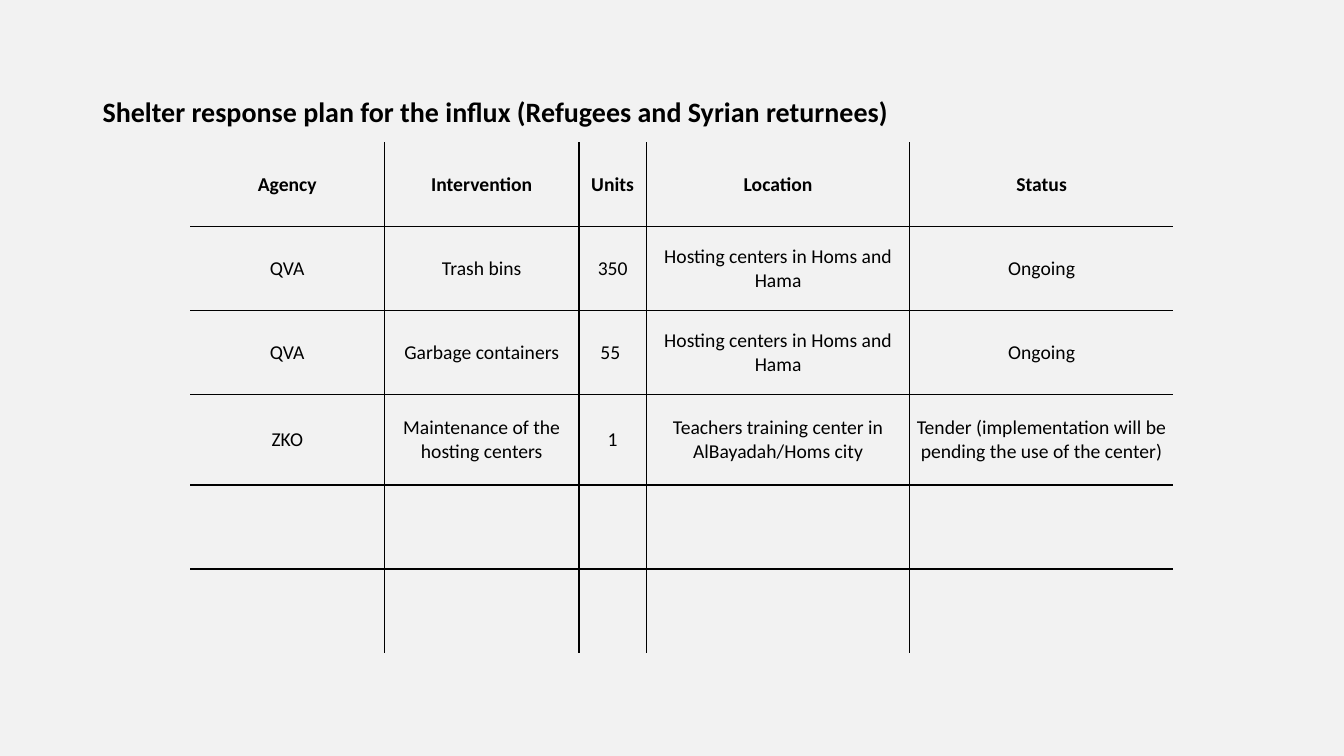
from lxml import etree
from pptx import Presentation
from pptx import util as u
from pptx.dml.color import RGBColor
from pptx.enum import text
from pptx.oxml import ns

TITLE = "Shelter response plan for the influx (Refugees and Syrian returnees)"
ROWS = [
    ("Agency", "Intervention", "Units", "Location", "Status"),
    ("QVA", "Trash bins", "350", "Hosting centers in Homs and Hama", "Ongoing"),
    ("QVA", "Garbage containers", "55 ", "Hosting centers in Homs and Hama", "Ongoing"),
    ("ZKO", "Maintenance of the hosting centers", "1",
     "Teachers training center in AlBayadah/Homs city",
     "Tender (implementation will be pending the use of the center)"),
    ("",) * 5,
    ("",) * 5,
]
COLUMN_WIDTHS = (4.9, 4.9, 1.7, 6.64, 6.64)
ROW_HEIGHTS = (2.12, 2.12, 2.12, 2.28, 2.12, 2.12)
TABLE_LEFT, TABLE_TOP = 4.79, 3.58
INK, PAPER, FONT = "000000", "F2F2F2", "Calibri"


def paint(fill, color):
    fill.solid()
    fill.fore_color.rgb = RGBColor.from_string(color)


def write(para, words, size, bold):
    span = para.add_run()
    span.text = words
    span.font.name = FONT
    span.font.size = u.Pt(size)
    span.font.bold = bold
    paint(span.font.fill, INK)


def add_border(cell, side):
    line = etree.SubElement(cell._tc.get_or_add_tcPr(), ns.qn(f"a:ln{side}"), w=str(u.Pt(1)))
    fill = etree.SubElement(line, ns.qn("a:solidFill"))
    etree.SubElement(fill, ns.qn("a:srgbClr"), val=INK)


def hide_border(cell, side):
    line = etree.SubElement(cell._tc.get_or_add_tcPr(), ns.qn(f"a:ln{side}"), w="0")
    etree.SubElement(line, ns.qn("a:noFill"))


def format_cell(cell, row, column):
    inner = {
        "L": column > 0,
        "R": column < len(COLUMN_WIDTHS) - 1,
        "T": row > 0,
        "B": row < len(ROWS) - 1,
    }
    for side, visible in inner.items():
        (add_border if visible else hide_border)(cell, side)
    paint(cell.fill, PAPER)
    cell.vertical_anchor = text.MSO_ANCHOR.MIDDLE
    cell.margin_left = cell.margin_right = cell.margin_top = u.Cm(0.02)
    cell.margin_bottom = 0


def add_title(page):
    box = page.shapes.title
    box.left, box.top, box.width, box.height = map(u.Cm, (2.33, 1.01, 29.21, 3.68))
    frame = box.text_frame
    frame.word_wrap = True
    frame.auto_size = text.MSO_AUTO_SIZE.NONE
    frame.vertical_anchor = text.MSO_ANCHOR.MIDDLE
    para = frame.paragraphs[0]
    para.alignment = text.PP_ALIGN.LEFT
    para.line_spacing = 0.9
    write(para, TITLE, 20, True)


def add_plan(page):
    table = page.shapes.add_table(
        len(ROWS), len(COLUMN_WIDTHS), u.Cm(TABLE_LEFT), u.Cm(TABLE_TOP),
        u.Cm(sum(COLUMN_WIDTHS)), u.Cm(sum(ROW_HEIGHTS))).table
    table.horz_banding = False
    for column, width in zip(table.columns, COLUMN_WIDTHS):
        column.width = u.Cm(width)
    for row, height in zip(table.rows, ROW_HEIGHTS):
        row.height = u.Cm(height)
    for i, values in enumerate(ROWS):
        for j, value in enumerate(values):
            cell = table.cell(i, j)
            format_cell(cell, i, j)
            if value:
                para = cell.text_frame.paragraphs[0]
                para.alignment = text.PP_ALIGN.CENTER
                write(para, value, 14, i == 0)


def main():
    deck = Presentation()
    deck.slide_width, deck.slide_height = u.Cm(33.87), u.Cm(19.05)
    page = deck.slides.add_slide(deck.slide_layouts[5])
    paint(page.background.fill, PAPER)
    add_title(page)
    add_plan(page)
    deck.save("out.pptx")


if __name__ == "__main__":
    main()
